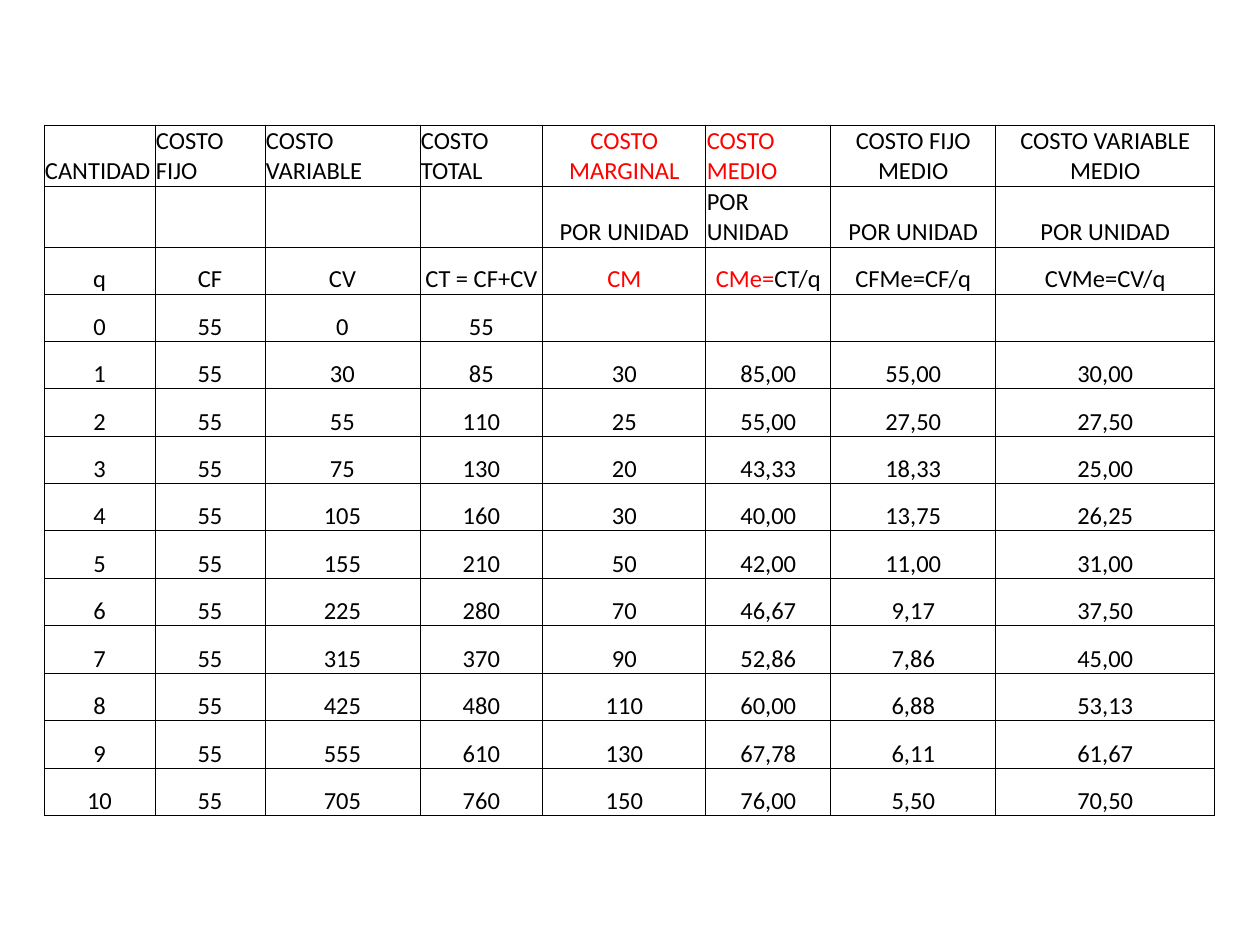
import math
from dataclasses import dataclass
from itertools import accumulate, pairwise

from lxml import etree
from pptx import Presentation
from pptx import util as u
from pptx.dml.color import RGBColor
from pptx.enum import text
from pptx.oxml.ns import qn

PX = 914400 // 126  # EMU in one px


@dataclass(frozen=True)
class Theme:
    font: str = "Calibri"
    size: int = 14
    ink: str = "000000"
    accent: str = "FF0000"
    border_width: float = 0.5


THEME = Theme()

# Table geometry in px
LEFT, TOP = 44, 125
COLUMN_WIDTHS = [111, 110, 155, 123, 163, 125, 165, 219]
HEADING_HEIGHT, BODY_HEIGHT = 61, 569

# Heading rows
TITLES = ["CANTIDAD", "COSTO FIJO", "COSTO VARIABLE", "COSTO TOTAL", "COSTO MARGINAL",
          "COSTO MEDIO", "COSTO FIJO MEDIO", "COSTO VARIABLE MEDIO"]
UNITS = [""] * 4 + ["POR UNIDAD"] * 4
SYMBOLS = ["q", "CF", "CV", "CT = CF+CV", "CM", "CMe=CT/q", "CFMe=CF/q", "CVMe=CV/q"]

LEFT_ALIGNED = {(0, 0), (0, 1), (0, 2), (0, 3), (0, 5), (1, 5)}
# Number of leading characters in the accent colour, by row and column
ACCENTED = {(0, 4): len(TITLES[4]), (0, 5): len(TITLES[5]), (2, 4): 2, (2, 5): 4}

# Costs from which the other columns follow
FIXED_COST = 55
VARIABLE_COSTS = [0, 30, 55, 75, 105, 155, 225, 315, 425, 555, 705]


def px(length):
    return u.Emu(length * PX)


def average(cost, quantity):
    cents = math.floor(100 * cost / quantity + 0.5)
    return f"{cents // 100},{cents % 100:02d}"


def cost_rows():
    for quantity, variable in enumerate(VARIABLE_COSTS):
        total = FIXED_COST + variable
        row = [quantity, FIXED_COST, variable, total]
        if quantity:
            row.append(variable - VARIABLE_COSTS[quantity - 1])
            row += [average(cost, quantity) for cost in (total, FIXED_COST, variable)]
        else:
            row += [""] * 4
        yield [str(value) for value in row]


def row_heights(body_count):
    edges = [round(BODY_HEIGHT * i / body_count) for i in range(body_count + 1)]
    return [HEADING_HEIGHT] * 2 + [end - start for start, end in pairwise(edges)]


def add_borders(cell):
    properties = cell._tc.get_or_add_tcPr()
    for side in ("a:lnL", "a:lnR", "a:lnT", "a:lnB"):
        line = etree.SubElement(properties, qn(side), w=str(u.Pt(THEME.border_width)))
        fill = etree.SubElement(line, qn("a:solidFill"))
        etree.SubElement(fill, qn("a:srgbClr"), val=THEME.ink)


def write_cell(cell, wording, align, accented):
    add_borders(cell)
    cell.fill.background()
    cell.vertical_anchor = text.MSO_ANCHOR.BOTTOM
    cell.margin_left = cell.margin_right = cell.margin_top = px(1)
    cell.margin_bottom = 0
    paragraph = cell.text_frame.paragraphs[0]
    paragraph.alignment = align
    paragraph.font.name = THEME.font
    paragraph.font.size = u.Pt(THEME.size)
    parts = [(wording[:accented], THEME.accent), (wording[accented:], THEME.ink)]
    for words, color in parts:
        if words:
            run = paragraph.add_run()
            run.text = words
            run.font.color.rgb = RGBColor.from_string(color)


def add_cost_table(slide):
    rows = [TITLES, UNITS, SYMBOLS, *cost_rows()]
    heights = row_heights(len(rows) - 2)
    frame = slide.shapes.add_table(len(rows), len(COLUMN_WIDTHS), px(LEFT), px(TOP),
                                   px(sum(COLUMN_WIDTHS)), px(sum(heights)))
    table = frame.table
    table.first_row = table.horz_banding = False
    for column, width in zip(table.columns, COLUMN_WIDTHS):
        column.width = px(width)
    for r, (wordings, height) in enumerate(zip(rows, heights)):
        table.rows[r].height = px(height)
        for c, wording in enumerate(wordings):
            align = text.PP_ALIGN.LEFT if (r, c) in LEFT_ALIGNED else text.PP_ALIGN.CENTER
            write_cell(table.cell(r, c), wording, align, ACCENTED.get((r, c), 0))


def main():
    deck = Presentation()
    deck.slide_width, deck.slide_height = px(1260), px(945)
    slide = deck.slides.add_slide(deck.slide_layouts[6])
    add_cost_table(slide)
    deck.save("out.pptx")


if __name__ == "__main__":
    main()
